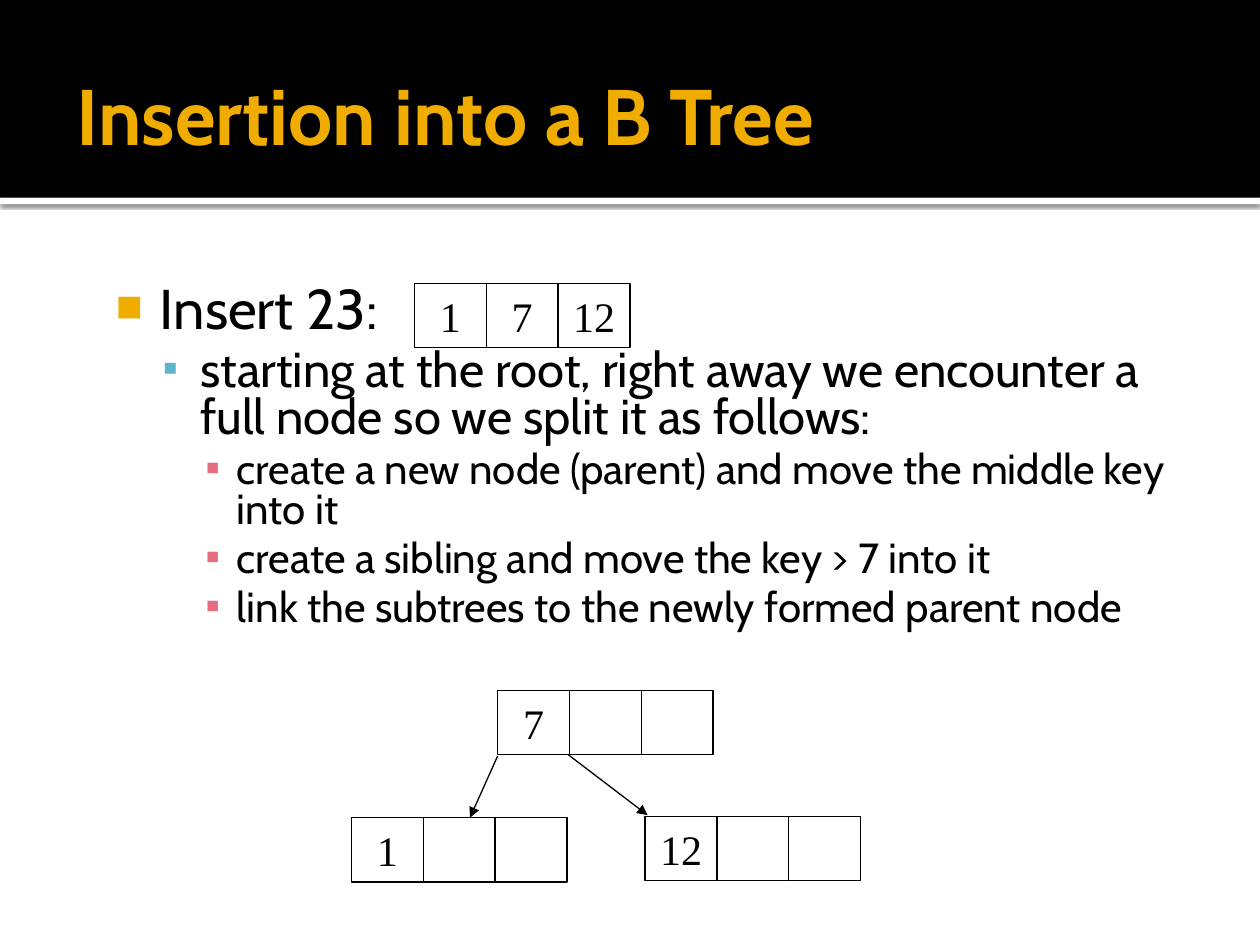
from dataclasses import dataclass

from lxml import etree
from pptx import Presentation
from pptx.dml.color import RGBColor
from pptx.enum.shapes import MSO_CONNECTOR, MSO_SHAPE
from pptx.enum.text import MSO_ANCHOR, MSO_AUTO_SIZE, PP_ALIGN
from pptx.oxml.ns import qn
from pptx.util import Pt

RECTANGLE = MSO_SHAPE.RECTANGLE
STRAIGHT = MSO_CONNECTOR.STRAIGHT
TOP, MIDDLE = MSO_ANCHOR.TOP, MSO_ANCHOR.MIDDLE
LEFT, CENTER = PP_ALIGN.LEFT, PP_ALIGN.CENTER
NO_FIT = MSO_AUTO_SIZE.NONE


@dataclass(frozen=True)
class Level:
    size: float
    margin: float
    hanging: float
    before: float
    symbol: str
    color: str
    scale: int


@dataclass(frozen=True)
class Theme:
    ink: str = "000000"
    paper: str = "FFFFFF"
    accent: str = "F0AD00"
    font: str = "Cabin"
    key_font: str = "Times New Roman"
    title_size: float = 45
    key_size: float = 24
    line_width: float = 0.75
    levels: tuple = (
        Level(32, 34.56, 25.2, 0, "■", "F0AD00", 80),
        Level(28, 57.6, 21.6, 5.6, "▪", "60B5CC", 90),
        Level(24, 78.48, 18, 4.8, "▪", "E66C7D", 100),
    )


THEME = Theme()
CELL_WIDTH, CELL_HEIGHT = 41.04, 36.72
BULLETS = (
    (0, "Insert 23:"),
    (1, "starting at the root, right away we encounter a full node so we split it as follows:"),
    (2, "create a new node (parent) and move the middle key into it"),
    (2, "create a sibling and move the key > 7 into it"),
    (2, "link the subtrees to the newly formed parent node"),
)
NODES = (
    (284.4, 394.56, ("7", "", "")),
    (200.88, 467.28, ("1", "", "")),
    (368.64, 466.56, ("12", "", "")),
    (236.88, 162, ("1", "7", "12")),
)
LINKS = ((284.4, 432, 268.56, 467.28), (324.72, 431.28, 370.08, 465.84))


def apply(target, values):
    for name, value in values.items():
        setattr(target, name, value)


def add_xml(parent, tag, **attributes):
    return etree.SubElement(parent, qn(tag), attributes)


def place(box, left, top, width, height):
    apply(box, {"left": Pt(left), "top": Pt(top), "width": Pt(width), "height": Pt(height)})


def format_frame(frame, anchor, insets):
    apply(frame, {"word_wrap": True, "auto_size": NO_FIT, "vertical_anchor": anchor})
    sides = ("margin_left", "margin_top", "margin_right", "margin_bottom")
    apply(frame, {side: Pt(inset) for side, inset in zip(sides, insets)})


def write(para, text, font, size, color, bold=False):
    span = para.add_run()
    span.text = text
    apply(span.font, {"name": font, "size": Pt(size), "bold": bold})
    span.font.color.rgb = RGBColor.from_string(color)


def add_band(page, top, height, color):
    band = page.shapes.add_shape(RECTANGLE, 0, Pt(top), Pt(720), Pt(height))
    band.shadow.inherit = False
    band.fill.solid()
    band.fill.fore_color.rgb = RGBColor.from_string(color)
    band.line.fill.background()
    page.shapes._spTree.insert(2, band._element)
    return band


def add_shadow(box):
    effects = box._element.spPr.find(qn("a:effectLst"))
    shadow = add_xml(effects, "a:outerShdw", blurRad=str(Pt(2.5)), dist=str(Pt(0.8)),
                     dir="5400000", algn="t", rotWithShape="0")
    color = add_xml(shadow, "a:srgbClr", val=THEME.ink)
    add_xml(color, "a:alpha", val="60000")


def fill_title(title):
    place(title, 36.72, 20.16, 645.84, 90)
    format_frame(title.text_frame, MIDDLE, (7.2, 3.6, 3.6, 3.6))
    para = title.text_frame.paragraphs[0]
    para.alignment = LEFT
    write(para, "Insertion into a B Tree", THEME.font, THEME.title_size, THEME.accent, True)


def format_bullet(para, level):
    apply(para, {"line_spacing": 0.8, "space_before": Pt(level.before), "alignment": LEFT})
    properties = para._p.get_or_add_pPr()
    properties.set("marL", str(Pt(level.margin)))
    properties.set("indent", str(-Pt(level.hanging)))
    color = add_xml(properties, "a:buClr")
    add_xml(color, "a:srgbClr", val=level.color)
    add_xml(properties, "a:buSzPct", val=str(level.scale * 1000))
    add_xml(properties, "a:buChar", char=level.symbol)


def fill_body(body):
    place(body, 52.56, 156.24, 648.72, 222.48)
    frame = body.text_frame
    format_frame(frame, TOP, (4.32, 7.2, 7.2, 3.6))
    for index, (depth, text) in enumerate(BULLETS):
        para = frame.add_paragraph() if index else frame.paragraphs[0]
        para.level = depth
        level = THEME.levels[depth]
        format_bullet(para, level)
        write(para, text, THEME.font, level.size, THEME.ink)


def format_line(line):
    line.width = Pt(THEME.line_width)
    line.color.rgb = RGBColor.from_string(THEME.ink)


def add_node(page, left, top, keys):
    for index, key in enumerate(keys):
        cell = page.shapes.add_shape(RECTANGLE, Pt(left + index * CELL_WIDTH), Pt(top),
                                     Pt(CELL_WIDTH), Pt(CELL_HEIGHT))
        cell.shadow.inherit = False
        cell.fill.background()
        format_line(cell.line)
        if key:
            format_frame(cell.text_frame, MIDDLE, (3.6, 3.6, 3.6, 3.6))
            para = cell.text_frame.paragraphs[0]
            para.alignment = CENTER
            write(para, key, THEME.key_font, THEME.key_size, THEME.ink)


def add_link(page, *ends):
    link = page.shapes.add_connector(STRAIGHT, *(Pt(value) for value in ends))
    format_line(link.line)
    add_xml(link.line._get_or_add_ln(), "a:tailEnd", type="triangle")
    add_xml(link._element.spPr, "a:effectLst")


def main():
    deck = Presentation()
    apply(deck, {"slide_width": Pt(720), "slide_height": Pt(540)})
    page = deck.slides.add_slide(deck.slide_layouts[1])
    page.background.fill.solid()
    page.background.fill.fore_color.rgb = RGBColor.from_string(THEME.paper)
    add_band(page, 0, 113.04, THEME.ink)
    add_shadow(add_band(page, 113.04, 3.6, THEME.paper))
    fill_title(page.shapes.title)
    fill_body(page.placeholders[1])
    for node in NODES:
        add_node(page, *node)
    for link in LINKS:
        add_link(page, *link)
    deck.save("out.pptx")


if __name__ == "__main__":
    main()
